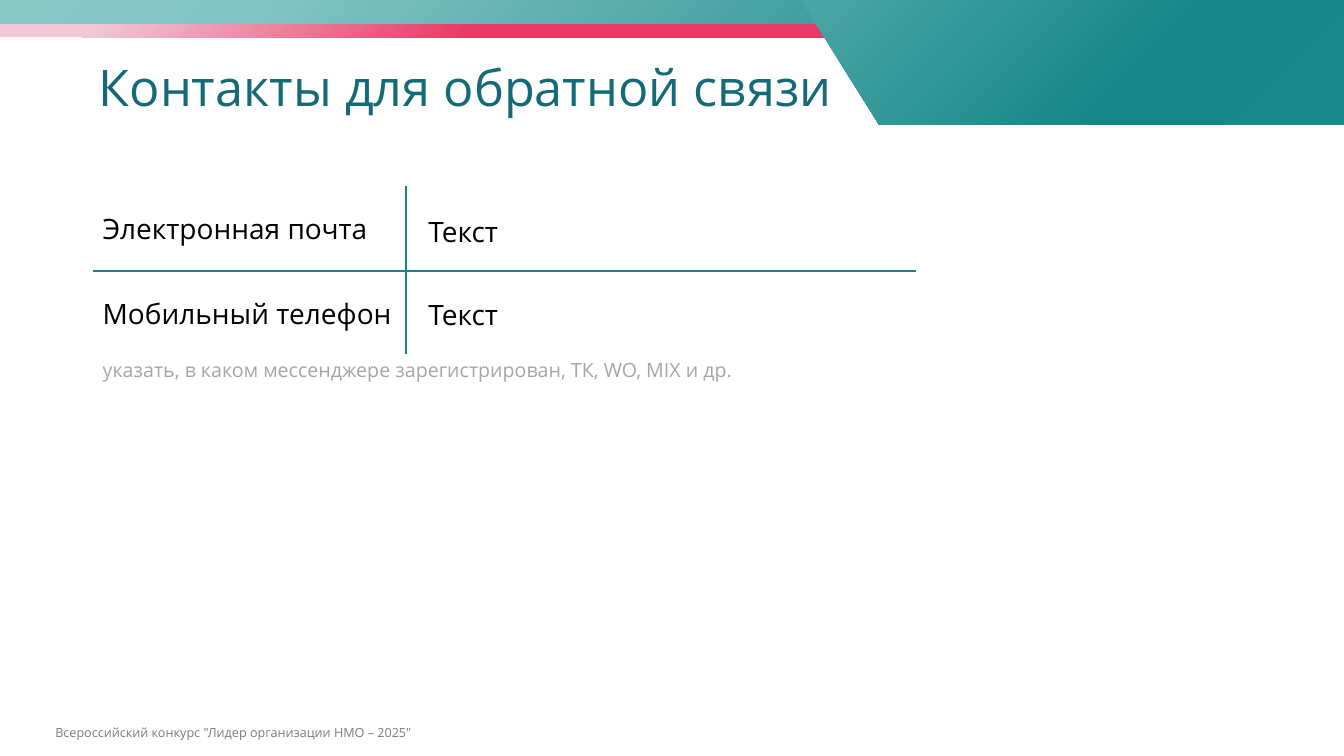
"""Build the contact slide with its banner, title and two-row contact grid."""
from lxml.etree import SubElement
from pptx import Presentation
from pptx.dml.color import RGBColor
from pptx.enum.shapes import MSO_CONNECTOR as Connector, MSO_SHAPE as Shape
from pptx.enum.text import MSO_ANCHOR as Anchor, MSO_AUTO_SIZE as AutoSize, PP_ALIGN as Align
from pptx.oxml.ns import qn
from pptx.util import Inches, Pt

hex_color = RGBColor.from_string
WIDTH, HEIGHT = 13.33, 7.5
TEAL = "168686"
LEFT, DIVIDER, VALUE_LEFT = 0.92, 4.03, 4.15


def write(box, text, size=20, color="000000", spacing=0.9, wrap=True, anchor=Anchor.TOP):
    """Fill a text box with one left-aligned paragraph."""
    frame = box.text_frame
    frame.word_wrap = wrap
    frame.auto_size = AutoSize.NONE
    frame.vertical_anchor = anchor
    para = frame.paragraphs[0]
    para.alignment = Align.LEFT
    para.line_spacing = spacing
    span = para.add_run()
    span.text = text
    span.font.name = "Open Sans"
    span.font.size = Pt(size)
    span.font.color.rgb = hex_color(color)


def shade(shape, stops):
    """Give a shape a round gradient that spreads from its lower right corner."""
    shape.shadow.inherit = False
    shape.line.fill.background()
    shape.fill.gradient()
    gradient = shape._element.spPr.find(qn("a:gradFill"))
    for child in list(gradient):
        gradient.remove(child)
    stop_list = SubElement(gradient, qn("a:gsLst"))
    for position, color, opacity in stops:
        stop = SubElement(stop_list, qn("a:gs"), pos=str(position * 1000))
        tone = SubElement(stop, qn("a:srgbClr"), val=color)
        if opacity < 100:
            SubElement(tone, qn("a:alpha"), val=str(opacity * 1000))
    circle = SubElement(gradient, qn("a:path"), path="circle")
    SubElement(circle, qn("a:fillToRect"), l="100000", t="100000")
    SubElement(gradient, qn("a:tileRect"), r="-100000", b="-100000")


deck = Presentation()
deck.slide_width, deck.slide_height = Inches(WIDTH), Inches(HEIGHT)
page = deck.slides.add_slide(deck.slide_layouts[5])
shapes = page.shapes

title = shapes.title
title.left, title.top, title.width, title.height = map(Inches, (0.88, 0.17, 11.5, 1.45))
write(title, "Контакты для обратной связи", size=36, color="146A76", anchor=Anchor.MIDDLE)

rules = [(LEFT, 2.69, 9.09, 2.69), (DIVIDER, 1.85, DIVIDER, 3.51)]
for ends in rules:
    rule = shapes.add_connector(Connector.STRAIGHT, *map(Inches, ends))
    rule.line.color.rgb = hex_color(TEAL)
    rule.line.width = Pt(1.5)
    SubElement(rule._element.spPr, qn("a:effectLst"))

texts = [
    ((LEFT, 2.09, 3, 0.4), "Электронная почта", {}),
    ((VALUE_LEFT, 2.08, 4.36, 0.44), "Текст", {"spacing": 1}),
    ((LEFT, 2.93, 3.16, 0.4), "Мобильный телефон", {"wrap": False}),
    ((VALUE_LEFT, 2.9, 4.36, 0.44), "Текст", {"spacing": 1}),
    ((LEFT, 3.53, 8.18, 0.31), "указать, в каком мессенджере зарегистрирован, ТК, WO, MIX и др.",
     {"size": 14, "color": "A6A6A6"}),
    ((0.45, 7.14, 12.83, 0.25), 'Всероссийский конкурс "Лидер организации НМО – 2025"',
     {"size": 9, "color": "7C7C7C", "spacing": 1}),
]
for area, text, style in texts:
    write(shapes.add_textbox(*map(Inches, area)), text, **style)

bands = [
    (-0.02, 0.26, [(0, "198888", 100), (11, TEAL, 100), (80, "83C5C5", 100), (100, "83C5C5", 93)]),
    (0.24, 0.13, [(65, "E83A66", 100), (93, "F1C8D6", 100), (100, "F1C8D6", 100)]),
]
for top, height, stops in bands:
    band = shapes.add_shape(Shape.RECTANGLE, 0, Inches(top), Inches(WIDTH), Inches(height))
    shade(band, stops)

outline = shapes.build_freeform(Inches(7.93), Inches(-0.02))
corners = [(WIDTH, -0.02), (WIDTH, 1.24), (8.72, 1.24)]
outline.add_line_segments([(Inches(x), Inches(y)) for x, y in corners], close=True)
shade(outline.convert_to_shape(), [(0, "198888", 100), (36, TEAL, 100), (100, "4DA6A6", 100)])

deck.save("out.pptx")
